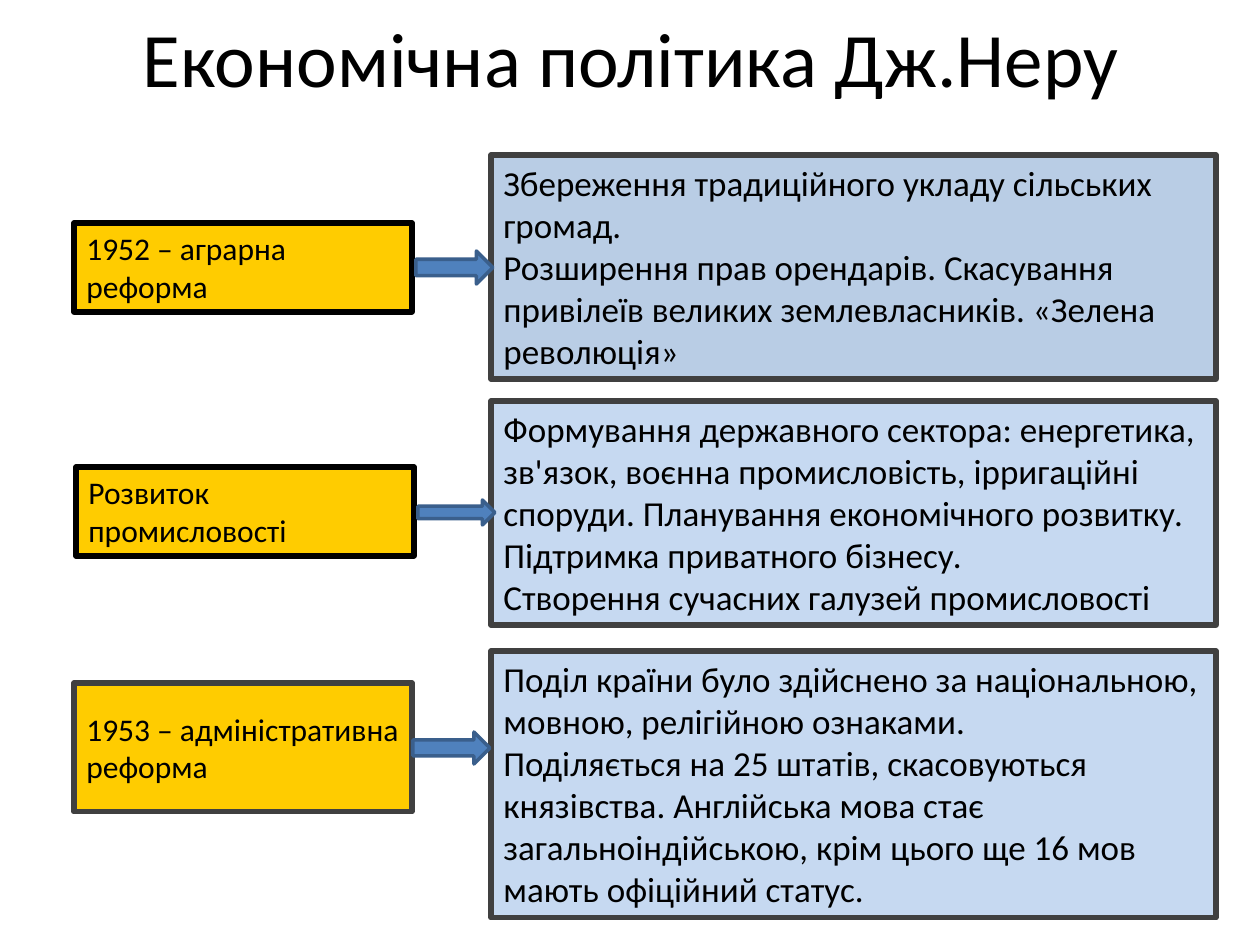
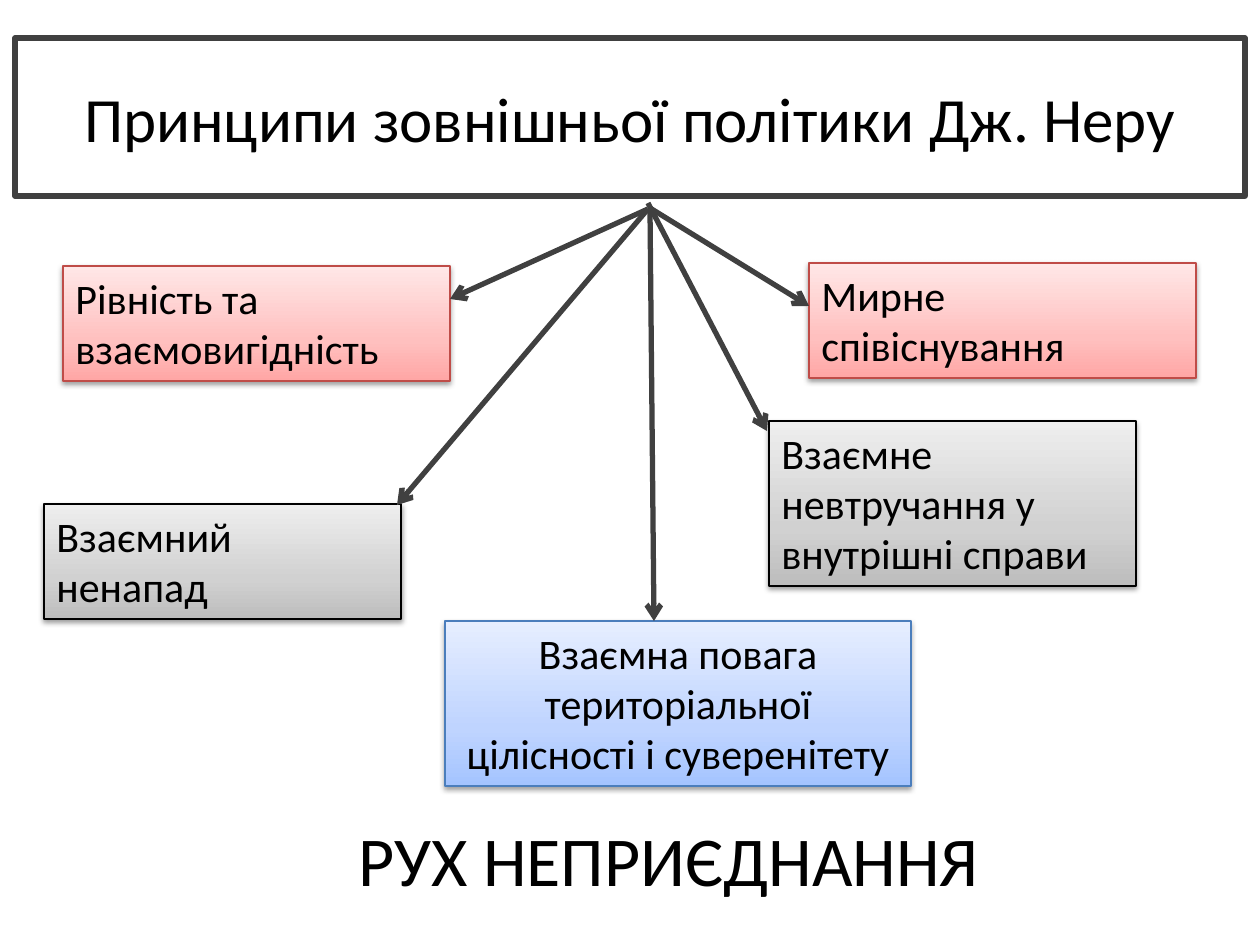
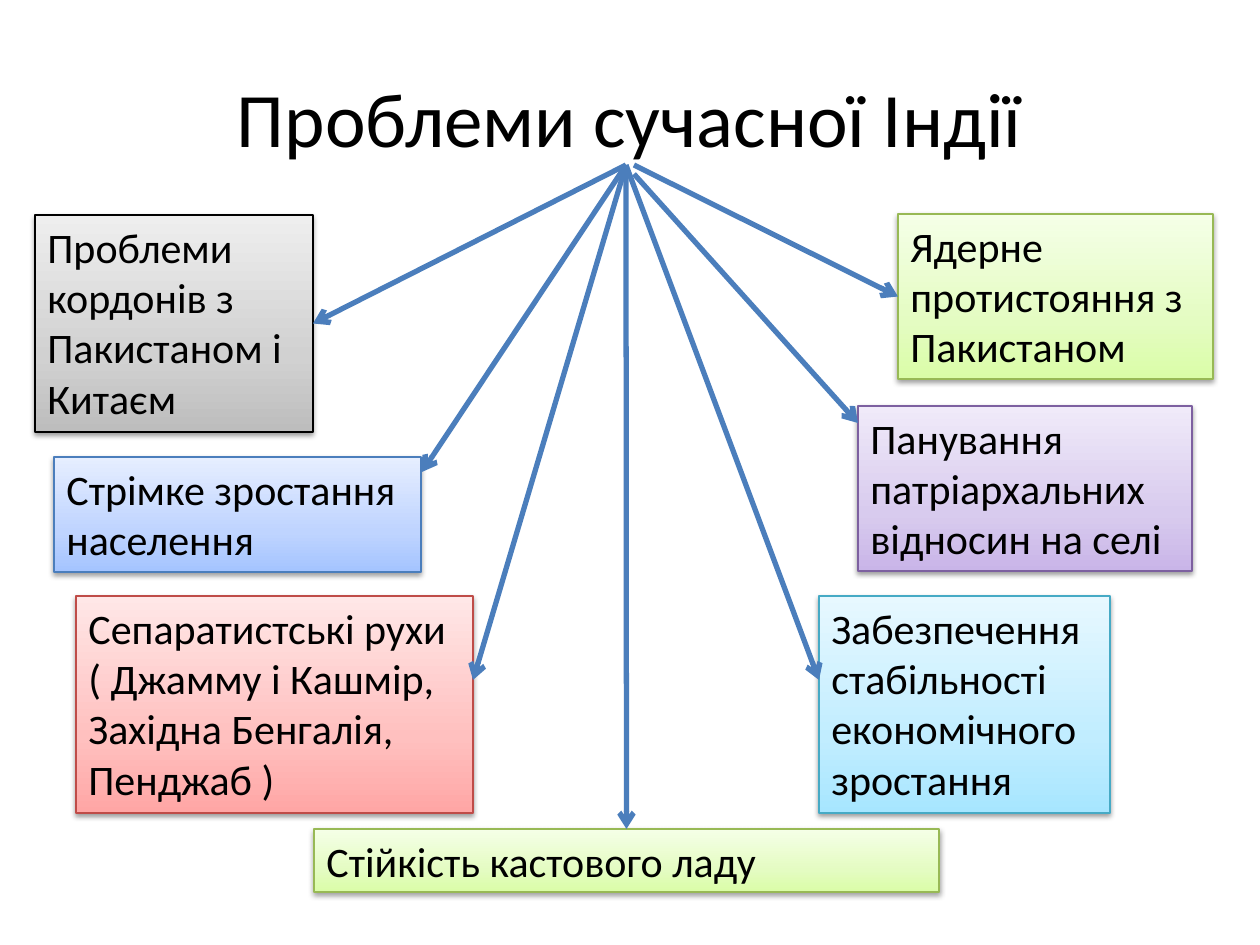
"""Build three slides on Nehru's policies and the problems of modern India."""
from copy import deepcopy

from lxml.etree import SubElement
from pptx import Presentation
from pptx.dml.color import RGBColor
from pptx.enum.shapes import MSO_CONNECTOR, MSO_SHAPE
from pptx.enum.text import MSO_ANCHOR, MSO_AUTO_SIZE, PP_ALIGN
from pptx.oxml.ns import qn
from pptx.util import Pt

PX = 914400 / 126
FONT = "Calibri"
COLORS = {
    "text": "000000", "black": "000000", "dark": "404040", "blue": "4B7EBC",
    "yellow": "FFCC00", "steel": "B9CDE5", "sky": "C6D9F1",
    "arrow": "4F81BD", "arrow_edge": "3A5F8C",
}
THEMES = {
    "red": ("BF4C48", "FFA6A5", "FFC0BF", "FFE7E7"),
    "gray": ("000000", "BDBDBD", "D1D1D1", "EEEEEE"),
    "blue": ("4B7EBC", "A4C4FF", "BFD4FF", "E6EEFF"),
    "green": ("98B955", "DAFDA7", "E4FCC2", "F5FFE7"),
    "aqua": ("46AAC5", "A7E6FF", "C1EDFF", "E7F8FF"),
    "purple": ("7D60A0", "C9B5E8", "D8CBEE", "F0EAF9"),
}
STOP_POSITIONS = (0, 0.35, 1)
LEFT, CENTER = PP_ALIGN.LEFT, PP_ALIGN.CENTER
TOP, MIDDLE = MSO_ANCHOR.TOP, MSO_ANCHOR.MIDDLE

ECONOMY_TITLE = ("Економічна політика Дж.Неру", (64, 3, 1134, 107))
REFORMS = [
    ("1952 – аграрна реформа", (74, 223, 338, 89), "black", TOP),
    ("Розвиток промисловості", (76, 467, 338, 89), "black", TOP),
    ("1953 – адміністративна реформа", (74, 683, 338, 129), "dark", MIDDLE),
]
RESULT_LEFT, RESULT_WIDTH = 491, 725
RESULTS = [
    ("Збереження традиційного укладу сільських громад.\n"
     "Розширення прав орендарів. Скасування привілеїв великих "
     "землевласників. «Зелена революція»", 155, 224, "steel"),
    ("Формування державного сектора: енергетика, зв'язок, воєнна "
     "промисловість, ірригаційні споруди. Планування економічного розвитку.\n"
     "Підтримка приватного бізнесу.\n"
     "Створення сучасних галузей промисловості", 401, 224, "sky"),
    ("Поділ країни було здійснено за національною, мовною, релігійною "
     "ознаками.\n"
     "Поділяється на 25 штатів, скасовуються князівства. Англійська мова стає "
     "загальноіндійською, крім цього ще 16 мов мають офіційний статус.",
     651, 267, "sky"),
]
BLOCK_ARROWS = [(416, 251, 77, 33), (418, 500, 77, 25), (413, 732, 77, 32)]

PRINCIPLES_TITLE = ("Принципи зовнішньої політики Дж. Неру", (15, 38, 1230, 158))
MOVEMENT = ("РУХ НЕПРИЄДНАННЯ", (292, 810, 753, 97))
PRINCIPLES = [
    ("Рівність та взаємовигідність", (63, 266, 387, 115), "red", LEFT,
     (648, 209), (450, 299), None),
    ("Взаємний ненапад", (44, 504, 357, 115), "gray", LEFT,
     (648, 209), (397, 505), None),
    ("Взаємна повага територіальної цілісності і суверенітету",
     (445, 621, 466, 165), "blue", CENTER, (650, 209), (654, 621), None),
    ("Мирне співіснування", (809, 263, 387, 115), "red", LEFT,
     (650, 208), (809, 306), None),
    ("Взаємне невтручання у внутрішні справи", (769, 421, 367, 165), "gray", LEFT,
     (648, 203), (767, 431), None),
]

PROBLEMS_TITLE = ("Проблеми сучасної Індії", (63, 38, 1134, 158))
HUB = (626, 165)
PROBLEMS = [
    ("Проблеми кордонів з Пакистаном і Китаєм", (35, 215, 278, 217), "gray", LEFT,
     HUB, (313, 324), 3),
    ("Стрімке зростання населення", (54, 457, 367, 115), "blue", LEFT,
     HUB, (422, 472), None),
    ("Сепаратистські рухи\n( Джамму і Кашмір, Західна Бенгалія, Пенджаб )",
     (76, 596, 397, 217), "red", LEFT, HUB, (473, 680), None),
    ("Стійкість кастового ладу", (314, 829, 625, 63), "green", LEFT,
     HUB, (626, 829), 0),
    ("Забезпечення стабільності економічного зростання", (819, 596, 291, 217),
     "aqua", LEFT, HUB, (819, 680), None),
    ("Панування патріархальних відносин на селі", (858, 406, 334, 165),
     "purple", LEFT, (634, 174), (858, 423), None),
    ("Ядерне протистояння з Пакистаном", (898, 214, 315, 165), "green", LEFT,
     (634, 165), (898, 297), 1),
]


def emu(lengths):
    return [round(length * PX) for length in lengths]


def rgb(name):
    return RGBColor.from_string(COLORS[name])


def write(shape, text, size, align=LEFT, anchor=TOP):
    frame = shape.text_frame
    frame.text = text
    frame.word_wrap = True
    frame.vertical_anchor = anchor
    frame.auto_size = (MSO_AUTO_SIZE.SHAPE_TO_FIT_TEXT if anchor == TOP
                       else MSO_AUTO_SIZE.NONE)
    for paragraph in frame.paragraphs:
        paragraph.alignment = align
        paragraph.font.name = FONT
        paragraph.font.size = Pt(size)
        paragraph.font.color.rgb = rgb("text")


def add_text(slide, text, box, size, anchor=MIDDLE):
    write(slide.shapes.add_textbox(*emu(box)), text, size, CENTER, anchor)


def add_box(slide, box, fill, line, width=3, preset=MSO_SHAPE.RECTANGLE):
    shape = slide.shapes.add_shape(preset, *emu(box))
    shape.shadow.inherit = False
    if fill:
        shape.fill.solid()
        shape.fill.fore_color.rgb = rgb(fill)
    else:
        shape.fill.background()
    shape.line.color.rgb = rgb(line)
    shape.line.width = Pt(width)
    return shape


def add_gradient_box(slide, box, theme):
    edge, *stop_colors = THEMES[theme]
    shape = add_box(slide, box, None, "black", 0.75)
    shape.line.color.rgb = RGBColor.from_string(edge)
    shape.fill.gradient()
    shape.fill.gradient_angle = 90
    stop_list = next(shape._element.iter(qn("a:gsLst")))
    stop_list.insert(1, deepcopy(stop_list[0]))
    for stop, position, color in zip(shape.fill.gradient_stops, STOP_POSITIONS,
                                     stop_colors):
        stop.position = position
        stop.color.rgb = RGBColor.from_string(color)
    effects = shape._element.spPr.find(qn("a:effectLst"))
    shadow = SubElement(effects, qn("a:outerShdw"), blurRad=str(Pt(3.1)),
                        dist=str(Pt(1.6)), dir="5400000", rotWithShape="0")
    shadow_color = SubElement(shadow, qn("a:srgbClr"), val=COLORS["black"])
    SubElement(shadow_color, qn("a:alpha"), val="38000")
    return shape


def add_arrow(slide, start, end, color, target, side):
    connector = slide.shapes.add_connector(MSO_CONNECTOR.STRAIGHT, *emu(start + end))
    if side is not None:
        connector.end_connect(target, side)
    connector.line.color.rgb = rgb(color)
    connector.line.width = Pt(3)
    properties = connector._element.spPr
    SubElement(properties.find(qn("a:ln")), qn("a:tailEnd"), type="arrow")
    SubElement(properties, qn("a:effectLst"))


def add_fan(slide, items, color):
    targets = []
    for text, box, theme, align, *_ in items:
        target = add_gradient_box(slide, box, theme)
        write(target, text, 24, align)
        targets.append(target)
    for target, (*_, start, end, side) in zip(targets, items):
        add_arrow(slide, start, end, color, target, side)


def build_economy(slide):
    add_text(slide, *ECONOMY_TITLE, 44)
    for text, box, line, anchor in REFORMS:
        write(add_box(slide, box, "yellow", line), text, 18, anchor=anchor)
    for text, top, height, fill in RESULTS:
        box = (RESULT_LEFT, top, RESULT_WIDTH, height)
        write(add_box(slide, box, fill, "dark"), text, 20)
    for box in BLOCK_ARROWS:
        add_box(slide, box, "arrow", "arrow_edge", 2, MSO_SHAPE.RIGHT_ARROW)


def build_principles(slide):
    title, box = PRINCIPLES_TITLE
    write(add_box(slide, box, None, "dark"), title, 36, CENTER, MIDDLE)
    add_text(slide, *MOVEMENT, 40, TOP)
    add_fan(slide, PRINCIPLES, "dark")


def build_problems(slide):
    add_text(slide, *PROBLEMS_TITLE, 44)
    add_fan(slide, PROBLEMS, "blue")


def main():
    presentation = Presentation()
    presentation.slide_width, presentation.slide_height = emu((1260, 945))
    blank = presentation.slide_layouts[6]
    for build in (build_economy, build_principles, build_problems):
        build(presentation.slides.add_slide(blank))
    presentation.save("out.pptx")


if __name__ == "__main__":
    main()
